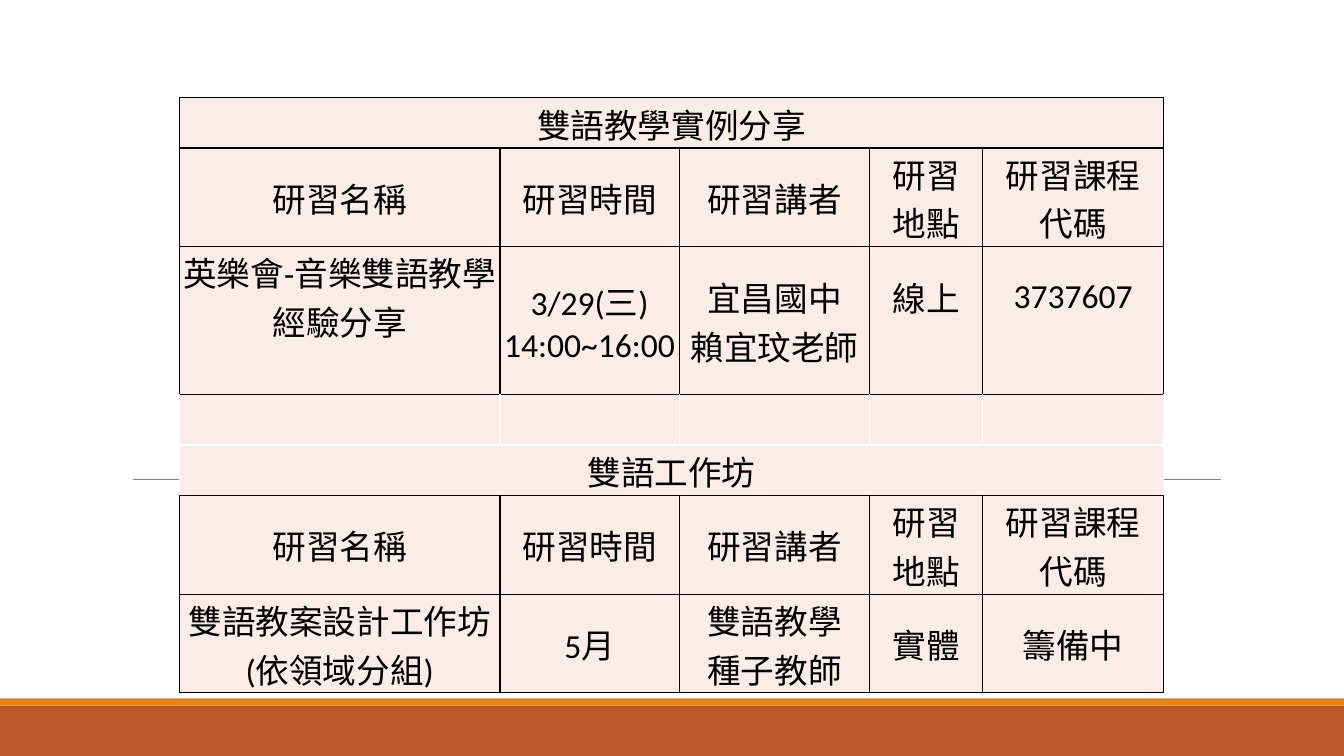
from dataclasses import dataclass

from lxml import etree
from pptx import Presentation
from pptx.dml.color import RGBColor
from pptx.enum.shapes import MSO_CONNECTOR, MSO_SHAPE
from pptx.enum.text import MSO_ANCHOR, PP_ALIGN
from pptx.oxml.ns import qn
from pptx.util import Cm, Pt

RECT = MSO_SHAPE.RECTANGLE
LINE = MSO_CONNECTOR.STRAIGHT
MIDDLE = MSO_ANCHOR.MIDDLE
CENTER = PP_ALIGN.CENTER


@dataclass
class Theme:
    rust: str = "BD582C"
    orange: str = "E48312"
    gray: str = "808080"
    pink: str = "FAEDE7"
    black: str = "000000"
    white: str = "FFFFFF"
    font: str = "Calibri"
    size: int = 24


theme = Theme()


def write(cell, text, size=theme.size, color=theme.black, align=CENTER, below=0):
    """Fill a cell with one paragraph per line of text."""
    cell.vertical_anchor = MIDDLE
    cell.margin_left = cell.margin_right = cell.margin_top = Cm(0.03)
    cell.margin_bottom = Cm(below)
    cell.text = text
    for para in cell.text_frame.paragraphs:
        para.alignment = align
        para.font.size = Pt(size)
        for run in para.runs:
            run.font.name = theme.font
            run.font.size = Pt(size)
            run.font.color.rgb = RGBColor.from_string(color)


def border(cell, colors):
    """Draw 1 pt borders; colors go left, right, top, bottom."""
    props = cell._tc.get_or_add_tcPr()
    for side, color in zip("LRTB", colors):
        edge = etree.SubElement(props, qn(f"a:ln{side}"), w=str(Pt(1)))
        fill = etree.SubElement(edge, qn("a:solidFill"))
        etree.SubElement(fill, qn("a:srgbClr"), val=color)


deck = Presentation()
deck.slide_width, deck.slide_height = Cm(33.87), Cm(19.05)
slide = deck.slides.add_slide(deck.slide_layouts[6])
shapes = slide.shapes

# Footer bands
for top, height, color in [(17.78, 1.27, theme.rust), (17.6, 0.18, theme.orange)]:
    band = shapes.add_shape(RECT, 0, Cm(top), deck.slide_width, Cm(height))
    band.shadow.inherit = False
    band.fill.solid()
    band.fill.fore_color.rgb = RGBColor.from_string(color)
    band.line.fill.background()

# Rule behind the table
rule = shapes.add_connector(LINE, Cm(3.35), Cm(12.07), Cm(30.78), Cm(12.07))
rule.line.color.rgb = RGBColor.from_string(theme.gray)
rule.line.width = Pt(0.5)
etree.SubElement(rule._element.spPr, qn("a:effectLst"))

# Course table
heads = ["研習名稱", "研習時間", "研習講者", "研習\n地點", "研習課程\n代碼"]
rows = [
    ["雙語教學實例分享"],
    heads,
    ["英樂會-音樂雙語教學經驗分享", "3/29(三)\n14:00~16:00",
     "宜昌國中\n賴宜玟老師", "線上", "3737607"],
    [],
    ["雙語工作坊"],
    heads,
    ["雙語教案設計工作坊 (依領域分組)", "5月", "雙語教學\n種子教師", "實體", "籌備中"],
]
widths = [8.08, 4.52, 4.8, 2.84, 4.57]
heights = [1.27, 1.68, 2.54, 1.27, 1.27, 1.27, 1.27]
SHARE, GAP, SHOP = 2, 3, 4
raised = {(SHARE, 0), (SHARE, 3), (SHARE, 4)}

frame = shapes.add_table(len(rows), len(widths), Cm(4.52), Cm(2.46),
                         Cm(sum(widths)), Cm(sum(heights)))
table = frame.table
for col, width in zip(table.columns, widths):
    col.width = Cm(width)
for row, height in zip(table.rows, heights):
    row.height = Cm(height)

black, white = theme.black, theme.white
edges = {GAP: [white, white, black, white], SHOP: [white, white, white, black]}
for r, texts in enumerate(rows):
    for c in range(len(widths)):
        cell = table.cell(r, c)
        border(cell, edges.get(r, [black] * 4))
        cell.fill.solid()
        cell.fill.fore_color.rgb = RGBColor.from_string(theme.pink)
        if c < len(texts):
            write(cell, texts[c], below=1.24 if (r, c) in raised else 0)
    if len(texts) == 1:
        table.cell(r, 0).merge(table.cell(r, len(widths) - 1))

deck.save("out.pptx")
